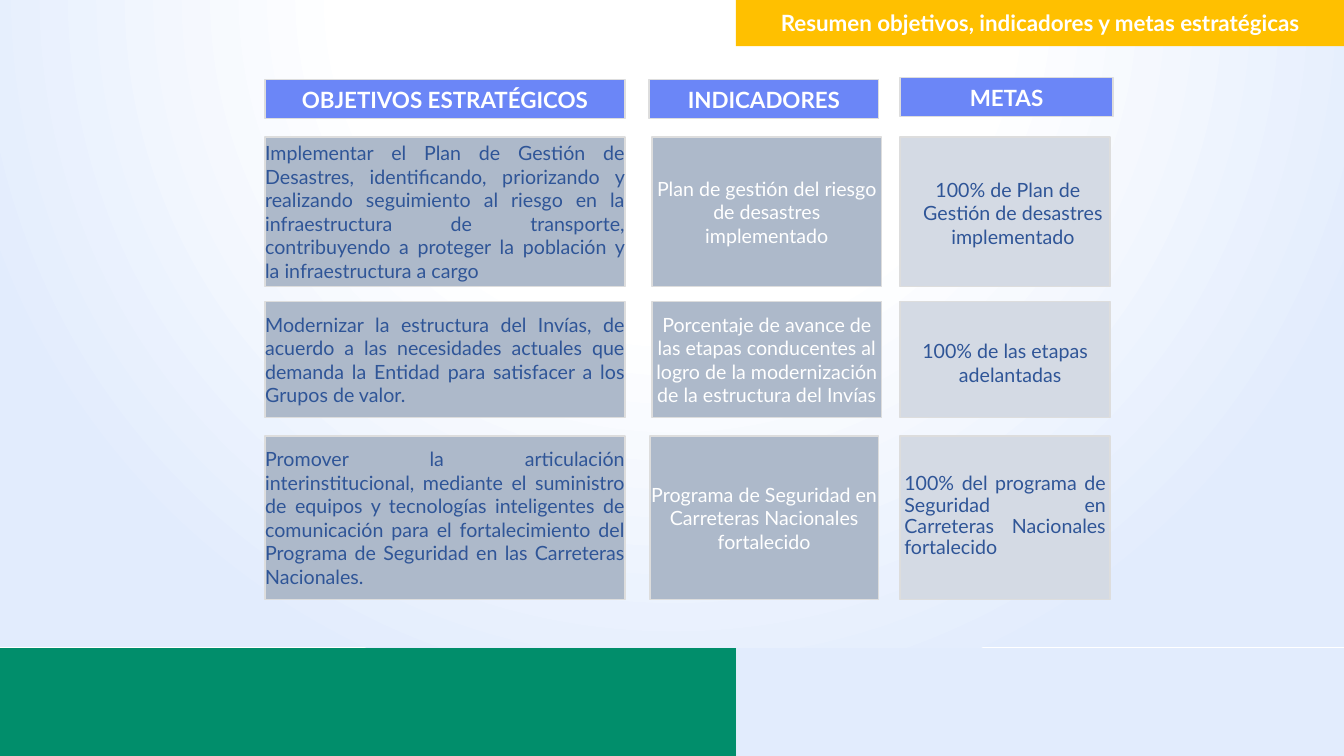
"""Build the summary slide of strategic objectives, indicators and goals."""
import pptx
import pptx.dml.color
import pptx.enum.shapes
import pptx.enum.text
import pptx.oxml
import pptx.oxml.ns
import pptx.util

Pt = pptx.util.Pt
ALIGN = pptx.enum.text.PP_ALIGN
MIDDLE = pptx.enum.text.MSO_ANCHOR.MIDDLE
COLORS = {
    "white": "FFFFFF", "pale": "E2ECFD", "green": "018E6B", "yellow": "FFC000",
    "header": "6B86F7", "cell": "ADB9CA", "goal": "D4DAE4", "border": "DDDDDD",
    "text": "2F5597",
}

deck = pptx.Presentation()
deck.slide_width, deck.slide_height = Pt(960), Pt(540)
page = deck.slides.add_slide(deck.slide_layouts[6])


def add_box(left, top, width, height, fill, border=True):
    box = page.shapes.add_shape(
        pptx.enum.shapes.MSO_SHAPE.RECTANGLE, Pt(left), Pt(top), Pt(width), Pt(height))
    box.shadow.inherit = False
    box.fill.solid()
    box.fill.fore_color.rgb = pptx.dml.color.RGBColor.from_string(COLORS[fill])
    if border:
        box.line.color.rgb = pptx.dml.color.RGBColor.from_string(COLORS["border"])
        box.line.width = Pt(1)
    else:
        box.line.fill.background()
    return box


def write(box, text, size, color, align, bold=False, insets=(0, 0), anchor=MIDDLE):
    frame = box.text_frame
    frame.word_wrap = True
    frame.vertical_anchor = anchor
    frame.margin_left = frame.margin_right = Pt(insets[0])
    frame.margin_top = frame.margin_bottom = Pt(insets[1])
    para = frame.paragraphs[0]
    para.text = text
    para.alignment = align
    para.font.name = "Lato"
    para.font.size = Pt(size)
    para.font.bold = bold
    para.font.color.rgb = pptx.dml.color.RGBColor.from_string(COLORS[color])
    return para


backdrop = add_box(0, -2, 962.5, 464.5, "white", border=False)
stops = "".join(
    f'<a:gs pos="{position}"><a:srgbClr val="{COLORS[color]}"/></a:gs>'
    for position, color in ((0, "white"), (43000, "white"), (100000, "pale")))
gradient = pptx.oxml.parse_xml(
    f'<a:gradFill {pptx.oxml.ns.nsdecls("a")} rotWithShape="1"><a:gsLst>{stops}</a:gsLst>'
    '<a:path path="circle"><a:fillToRect l="50000" t="-80000" r="50000" b="180000"/></a:path>'
    '</a:gradFill>')
properties = backdrop.element.spPr
properties.replace(properties.find(pptx.oxml.ns.qn("a:solidFill")), gradient)

add_box(-1.2, 463, 527, 77, "green", border=False)
add_box(526, 463, 434, 77, "pale", border=False)

headers = [
    ("OBJETIVOS ESTRATÉGICOS", 189.4, 56.9, 257),
    ("INDICADORES", 463.7, 56.9, 164),
    ("METAS", 643, 55.4, 152),
]
for label, left, top, width in headers:
    write(add_box(left, top, width, 28, "header"), label, 16, "white", ALIGN.CENTER, bold=True)

rows = [
    {"top": 98, "height": 106.5, "indicator_box": (465.8, 164), "goal_box": (645, 121, 74),
     "hanging": True,
     "objective": "Implementar el Plan de Gestión de Desastres, identificando, priorizando y "
                  "realizando seguimiento al riesgo en la infraestructura de transporte, "
                  "contribuyendo a proteger la población y la infraestructura a cargo",
     "indicator": "Plan de gestión del riesgo de desastres implementado",
     "goal": "100% de Plan de Gestión de desastres implementado"},
    {"top": 215.3, "height": 83, "indicator_box": (465.8, 164), "goal_box": (643, 236.2, 45.5),
     "hanging": True,
     "objective": "Modernizar la estructura del Invías, de acuerdo a las necesidades actuales "
                  "que demanda la Entidad para satisfacer a los Grupos de valor.",
     "indicator": "Porcentaje de avance de las etapas conducentes al logro de la "
                  "modernización de la estructura del Invías",
     "goal": "100% de las etapas adelantadas"},
    {"top": 311.5, "height": 116.6, "indicator_box": (464.4, 163), "goal_box": (643, 332.6, 72.7),
     "hanging": False,
     "objective": "Promover la articulación interinstitucional, mediante el suministro de "
                  "equipos y tecnologías inteligentes de comunicación para el fortalecimiento "
                  "del Programa de Seguridad en las Carreteras Nacionales.",
     "indicator": "Programa de Seguridad en Carreteras Nacionales fortalecido",
     "goal": "100% del programa de Seguridad en Carreteras Nacionales fortalecido"},
]
for row in rows:
    top, height = row["top"], row["height"]
    objective = add_box(189.4, top, 257, height, "cell")
    write(objective, row["objective"], 14, "text", ALIGN.JUSTIFY)

    left, width = row["indicator_box"]
    indicator = add_box(left, top, width, height, "cell")
    write(indicator, row["indicator"], 14, "white", ALIGN.CENTER)

    add_box(643, top, 150, height, "goal")
    left, text_top, text_height = row["goal_box"]
    goal = page.shapes.add_textbox(Pt(left), Pt(text_top), Pt(150), Pt(text_height))
    align = ALIGN.CENTER if row["hanging"] else ALIGN.JUSTIFY
    para = write(goal, row["goal"], 14, "text", align, insets=(3, 6),
                 anchor=pptx.enum.text.MSO_ANCHOR.TOP)
    goal.text_frame.auto_size = pptx.enum.text.MSO_AUTO_SIZE.SHAPE_TO_FIT_TEXT
    if row["hanging"]:
        layout = para._p.get_or_add_pPr()
        layout.set("marL", str(Pt(7.2)))
        layout.set("indent", str(-Pt(7.2)))
    else:
        para.line_spacing = 0.9

title = add_box(525.6, -0.7, 434.9, 33.8, "yellow", border=False)
write(title, "Resumen objetivos, indicadores y metas estratégicas", 16, "white",
      ALIGN.CENTER, bold=True, insets=(7.2, 3.6))

deck.save("out.pptx")
